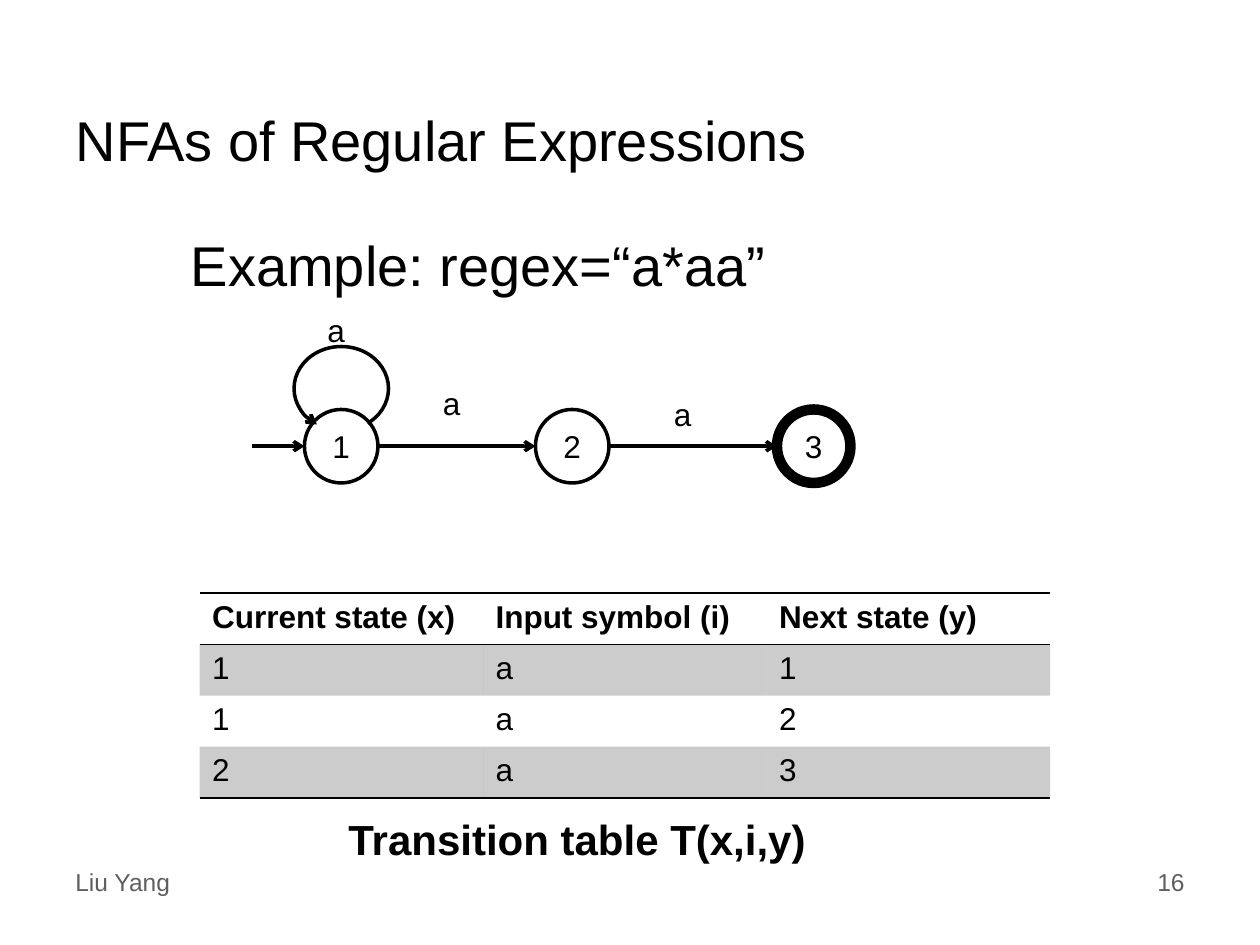
from lxml import etree
from pptx import Presentation
from pptx.dml.color import RGBColor
from pptx.enum.shapes import MSO_CONNECTOR as CONN, MSO_SHAPE as SHAPE
from pptx.enum.text import MSO_ANCHOR as ANCHOR, MSO_AUTO_SIZE as AUTO, PP_ALIGN as ALIGN
from pptx.oxml.ns import qn
from pptx.util import Emu, Pt

PX = 9525  # EMU in one px, 96 px to the inch
BLACK = RGBColor(0x00, 0x00, 0x00)
GRAY = RGBColor(0x5F, 0x5F, 0x5F)
FONT = "Arial"
NO_GRID = "{2D5ABB26-0587-4C30-8999-92F81FD0307C}"


def px(*lengths):
    return [Emu(n * PX) for n in lengths]


def sub(parent, tag, **attrs):
    return etree.SubElement(parent, qn(tag), attrs)


class Deck:
    """Holds the text and line style and the slide being built."""

    def __init__(self, slide):
        self.shapes = slide.shapes

    def put(self, tf, text, size=18, color=BLACK, bold=False, align=ALIGN.LEFT):
        p = tf.paragraphs[0]
        p.alignment = align
        r = p.add_run()
        r.text = text
        r.font.color.rgb = color
        style = {"name": FONT, "size": Pt(size), "bold": bold}
        for name, value in style.items():
            setattr(r.font, name, value)

    def stroke(self, sp, width, arrow=None):
        """Draw a black outline; arrow is a:headEnd (start) or a:tailEnd (end)."""
        sp.line.color.rgb = BLACK
        sp.line.width = Pt(width)
        if arrow:
            sub(sp.line._get_or_add_ln(), arrow, type="arrow")

    def title(self, text, *box):
        sp = self.shapes.title
        sp.left, sp.top, sp.width, sp.height = px(*box)
        sp.text_frame.vertical_anchor = ANCHOR.MIDDLE
        sp.text_frame.auto_size = AUTO.NONE
        self.put(sp.text_frame, text, 32)

    def text(self, text, *box, wrap=True, **style):
        tf = self.shapes.add_textbox(*px(*box)).text_frame
        tf.word_wrap = wrap
        self.put(tf, text, **style)

    def shape(self, kind, box, width, arrow=None):
        sp = self.shapes.add_shape(kind, *px(*box))
        sp.shadow.inherit = False
        sp.fill.background()
        self.stroke(sp, width, arrow)
        return sp

    def state(self, text, x, y, size, width):
        tf = self.shape(SHAPE.OVAL, (x, y, size, size), width).text_frame
        tf.vertical_anchor = ANCHOR.MIDDLE
        self.put(tf, text, align=ALIGN.CENTER)

    def loop(self, *box):
        sp = self.shape(SHAPE.ARC, box, 2, "a:headEnd")
        sp.adjustments[0], sp.adjustments[1] = 74.43, 31.77

    def arrow(self, x1, x2, y):
        sp = self.shapes.add_connector(CONN.STRAIGHT, *px(x1, y, x2, y))
        self.stroke(sp, 2, "a:tailEnd")
        sub(sp._element.spPr, "a:effectLst")

    def border(self, cell, side):
        ln = sub(cell._tc.get_or_add_tcPr(), side, w=str(Pt(1)))
        sub(sub(ln, "a:solidFill"), "a:srgbClr", val=str(BLACK))

    def tint(self, cell):
        cell.fill.solid()
        cell.fill.fore_color.rgb = BLACK
        color = cell._tc.tcPr.find(qn("a:solidFill") + "/" + qn("a:srgbClr"))
        sub(color, "a:alpha", val="20000")

    def table(self, rows, *box):
        """Rule above and below the header and under the end; odd rows are tinted."""
        tbl = self.shapes.add_table(len(rows), len(rows[0]), *px(*box)).table
        tbl._tbl.tblPr.find(qn("a:tableStyleId")).text = NO_GRID
        for i, row in enumerate(rows):
            for j, text in enumerate(row):
                cell = tbl.cell(i, j)
                if i == 0:
                    self.border(cell, "a:lnT")
                if i in (0, len(rows) - 1):
                    self.border(cell, "a:lnB")
                if i % 2:
                    self.tint(cell)
                else:
                    cell.fill.background()
                self.put(cell.text_frame, text, bold=i == 0)


def main():
    prs = Presentation()
    prs.slide_width, prs.slide_height = px(960, 720)
    s = Deck(prs.slides.add_slide(prs.slide_layouts[5]))

    s.text("Liu Yang", 48, 656, 240, 32, size=14, color=GRAY)
    s.title("NFAs of Regular Expressions", 48, 64, 864, 84)
    s.table([("Current state (x)", "Input symbol (i)", "Next state (y)"),
             ("1", "a", "1"),
             ("1", "a", "2"),
             ("2", "a", "3")], 152, 452, 648, 156)
    s.text("Example: regex=“a*aa”", 136, 171, 664, 61, size=32)
    s.text("Transition table T(x,i,y)", 256, 615, 464, 48, size=24, bold=True)

    size, top = 56, 312
    states = [("1", 232, 2), ("2", 408, 2), ("3", 592, 6)]
    start = 192
    for name, x, width in states:
        s.state(name, x, top, size, width)
        s.arrow(start, x, top + size // 2)
        start = x + size
    s.loop(224, 264, 72, 64)
    for x, y in [(328, 288), (504, 296), (240, 232)]:
        s.text("a", x, y, 33, 38, wrap=False)

    s.text("16", 688, 656, 224, 50, size=14, color=GRAY, align=ALIGN.RIGHT)
    prs.save("out.pptx")


if __name__ == "__main__":
    main()
